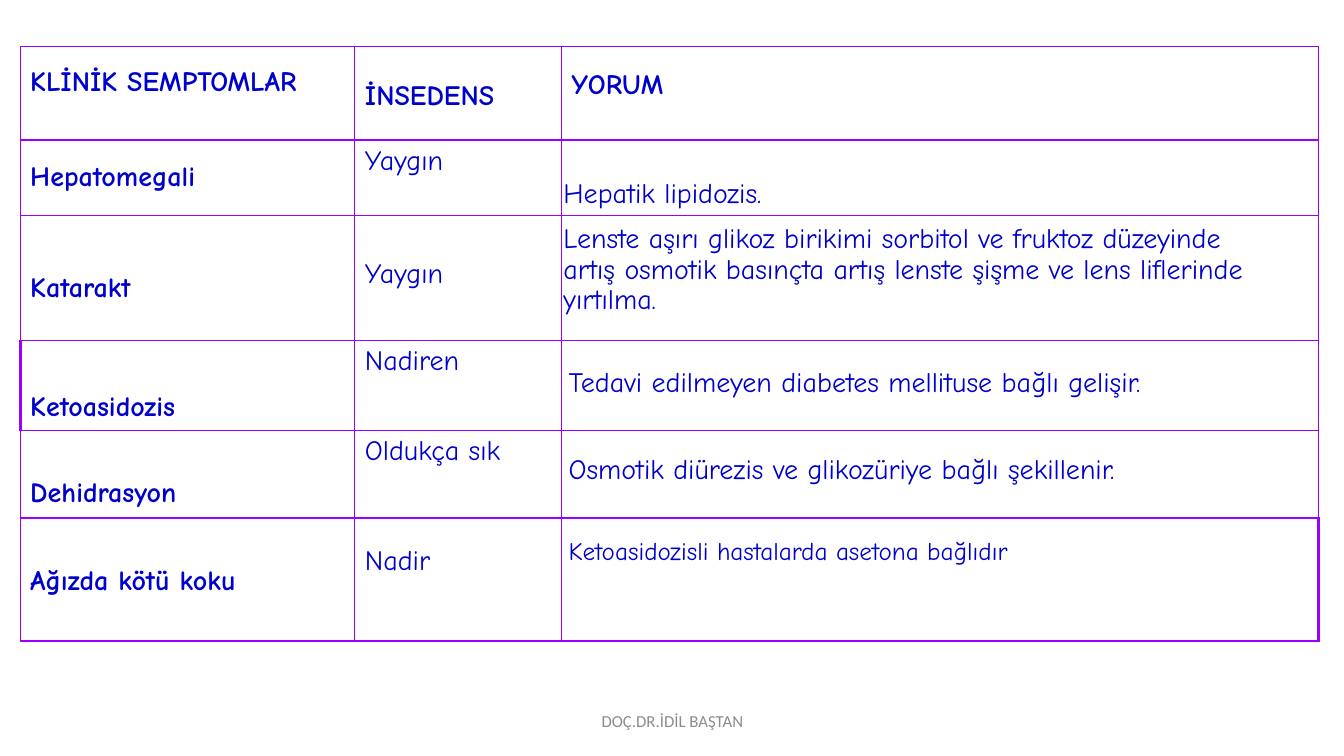
from dataclasses import dataclass

from lxml import etree
from pptx import Presentation
from pptx.dml.color import RGBColor
from pptx.enum.text import MSO_ANCHOR, PP_ALIGN
from pptx.oxml.ns import qn
from pptx.util import Inches, Pt

LEFT = PP_ALIGN.LEFT
CENTER = PP_ALIGN.CENTER
TOP = MSO_ANCHOR.TOP
MIDDLE = MSO_ANCHOR.MIDDLE


@dataclass(frozen=True)
class Theme:
    ink: str = "0000CC"
    grid: str = "9900FF"
    paper: str = "FFFFFF"
    footer_ink: str = "8C8C8C"
    font: str = "Comic Neue"
    footer_font: str = "Calibri"
    body: int = 20
    small: int = 18
    footer: int = 12
    thin: float = 1
    thick: float = 2.25


THEME = Theme()

COLUMN_WIDTHS = (3.32, 2.05, 7.51)
ROW_HEIGHTS = (0.93, 0.75, 1.24, 0.89, 0.87, 1.22)
HEADINGS = (("KLİNİK SEMPTOMLAR", 1.46), ("İNSEDENS", 1.9), ("YORUM", 1.56))
SYMPTOMS = (
    (("Hepatomegali", 1.5), ("Yaygın", 1)),
    (("Katarakt", 2.6), ("Yaygın", 2.16)),
    (("Ketoasidozis", 2.4), ("Nadiren", 1)),
    (("Dehidrasyon", 2.3), ("Oldukça sık", 1)),
    (("Ağızda kötü koku", 2.3), ("Nadir", 1.7)),
)
THICK_EDGES = {(3, 0): "L", (5, 2): "R"}
COMMENTS = (
    ("Hepatik lipidozis.", (5.49, 1.49, 6.95, 0.58),
     {"spacing": 1.6}),
    ("Lenste aşırı glikoz birikimi sorbitol ve fruktoz düzeyinde artış "
     "osmotik basınçta artış lenste şişme ve lens liflerinde yırtılma.",
     (5.49, 2.18, 7.25, 1.01), {"spacing": 0.9}),
    ("Tedavi edilmeyen diabetes mellituse bağlı gelişir.",
     (5.54, 3.57, 6.58, 0.44), {"wrap": False}),
    ("Osmotik diürezis ve glikozüriye bağlı şekillenir.",
     (5.54, 4.26, 6.42, 0.55), {"spacing": 1.5, "wrap": False}),
    ("Ketoasidozisli hastalarda asetona bağlıdır",
     (5.54, 5.26, 5.08, 0.4), {"size": THEME.small, "wrap": False}),
)


def write_text(frame, text, size=THEME.body, font=THEME.font, color=THEME.ink,
               bold=False, spacing=1, align=LEFT, anchor=TOP, wrap=True):
    frame.word_wrap = wrap
    frame.vertical_anchor = anchor
    paragraph = frame.paragraphs[0]
    paragraph.alignment = align
    paragraph.line_spacing = spacing
    run = paragraph.add_run()
    run.text = text
    run.font.size = Pt(size)
    run.font.name = font
    run.font.bold = bold
    run.font.color.rgb = RGBColor.from_string(color)


def add_text(slide, text, box, **text_format):
    holder = slide.shapes.add_textbox(*map(Inches, box))
    write_text(holder.text_frame, text, **text_format)


def style_cell(cell, thick_edge):
    properties = cell._tc.get_or_add_tcPr()
    for edge in "LRTB":
        width = THEME.thick if edge == thick_edge else THEME.thin
        line = etree.SubElement(properties, qn(f"a:ln{edge}"), w=str(Pt(width)))
        fill = etree.SubElement(line, qn("a:solidFill"))
        etree.SubElement(fill, qn("a:srgbClr"), val=THEME.grid)
    cell.fill.solid()
    cell.fill.fore_color.rgb = RGBColor.from_string(THEME.paper)


def add_symptom_table(slide, box):
    table = slide.shapes.add_table(
        len(ROW_HEIGHTS), len(COLUMN_WIDTHS), *map(Inches, box)).table
    table.first_row = False
    table.horz_banding = False
    for column, width in zip(table.columns, COLUMN_WIDTHS):
        column.width = Inches(width)
    for row, height in zip(table.rows, ROW_HEIGHTS):
        row.height = Inches(height)
    for r in range(len(ROW_HEIGHTS)):
        for c in range(len(COLUMN_WIDTHS)):
            cell = table.cell(r, c)
            style_cell(cell, THICK_EDGES.get((r, c)))
            cell.text_frame.paragraphs[0].font.size = Pt(THEME.body)
    for r, entries in enumerate((HEADINGS, *SYMPTOMS)):
        for c, (text, spacing) in enumerate(entries):
            write_text(table.cell(r, c).text_frame, text,
                       bold=r == 0 or c == 0, spacing=spacing)


def add_comments(slide):
    for text, box, text_format in COMMENTS:
        add_text(slide, text, box, **text_format)


def add_footer(slide, box):
    add_text(slide, "DOÇ.DR.İDİL BAŞTAN", box, size=THEME.footer,
             font=THEME.footer_font, color=THEME.footer_ink,
             align=CENTER, anchor=MIDDLE)


def main():
    deck = Presentation()
    deck.slide_width = Inches(13.33)
    deck.slide_height = Inches(7.5)
    slide = deck.slides.add_slide(deck.slide_layouts[6])
    add_symptom_table(slide, (0.2, 0.46, sum(COLUMN_WIDTHS), sum(ROW_HEIGHTS)))
    add_comments(slide)
    add_footer(slide, (4.42, 6.95, 4.5, 0.4))
    deck.save("out.pptx")


if __name__ == "__main__":
    main()
